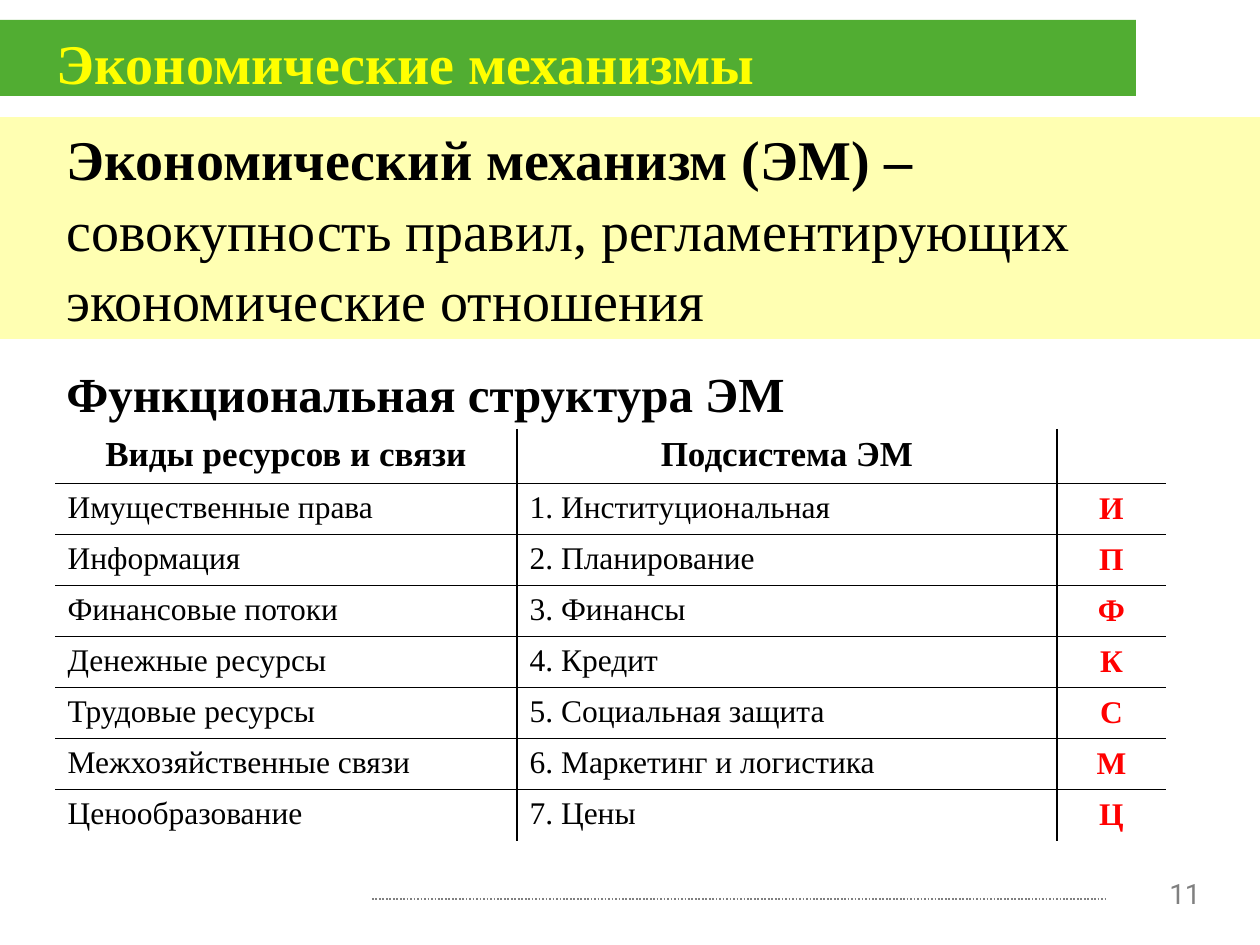
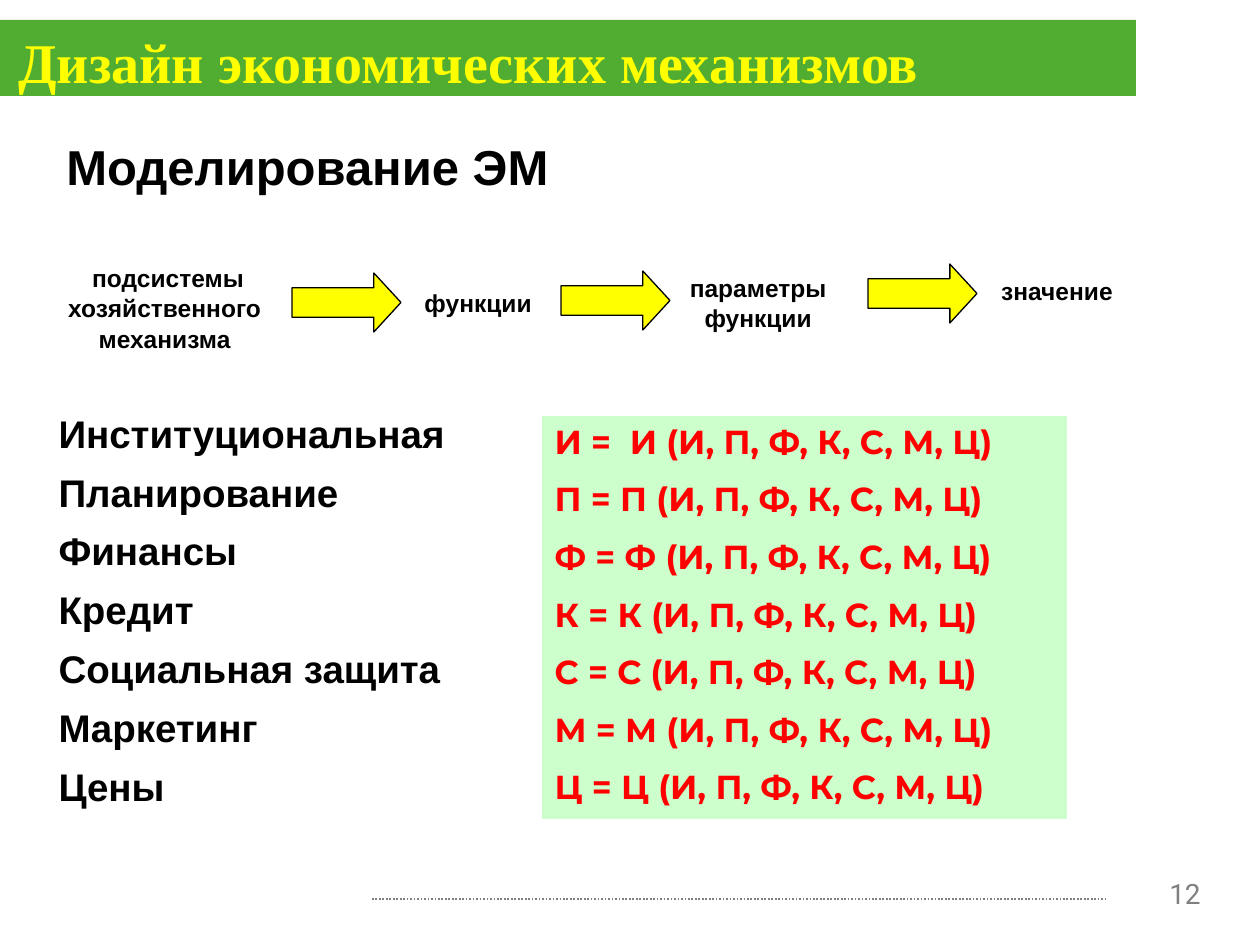
from collections import namedtuple

from lxml import etree
from pptx import Presentation
from pptx.dml.color import RGBColor
from pptx.enum.dml import MSO_LINE
from pptx.enum.shapes import MSO_CONNECTOR, MSO_SHAPE
from pptx.enum.text import MSO_ANCHOR as Anchor, PP_ALIGN as Align
from pptx.oxml.ns import qn
from pptx.util import Pt

EMU_PER_PX = 914400 / 126
PAGE_WIDTH, PAGE_HEIGHT = 1260, 945

BLACK = RGBColor(0x00, 0x00, 0x00)
RED = RGBColor(0xFF, 0x00, 0x00)
YELLOW = RGBColor(0xFF, 0xFF, 0x00)
GREEN = RGBColor(0x51, 0xAD, 0x32)
PALE_GREEN = RGBColor(0xCC, 0xFF, 0xCC)
GREY = RGBColor(0x80, 0x80, 0x80)

SERIF, SANS = "Times New Roman", "Arial"
NUMBER_FONT, FORMULA_FONT = "Roboto", "Montserrat"
LINE_SPACING = 1.05
NO_GRID_STYLE = "{2D5ABB26-0587-4C30-8999-92F81FD0307C}"

Box = namedtuple("Box", "left top width height")

SUBSYSTEMS = [
    ("Имущественные права", "Институциональная", "И"),
    ("Информация", "Планирование", "П"),
    ("Финансовые потоки", "Финансы", "Ф"),
    ("Денежные ресурсы", "Кредит", "К"),
    ("Трудовые ресурсы", "Социальная защита", "С"),
    ("Межхозяйственные связи", "Маркетинг и логистика", "М"),
    ("Ценообразование", "Цены", "Ц"),
]
SYMBOLS = [symbol for _, _, symbol in SUBSYSTEMS]


def px(length):
    return round(length * EMU_PER_PX)


def emu(box):
    return [px(length) for length in box]


def inside(box, left, top, width, height):
    """Return a box whose left and top are measured from the outer box."""
    return Box(box.left + left, box.top + top, width, height)


def write(para, text, size, font=SERIF, colour=BLACK, bold=False):
    span = para.add_run()
    span.text = text
    span.font.size = Pt(size)
    span.font.name = font
    span.font.color.rgb = colour
    span.font.bold = bold


def place_text(page, box, lines, align=Align.LEFT, anchor=Anchor.TOP, **style):
    frame = page.shapes.add_textbox(*emu(box)).text_frame
    frame.word_wrap = True
    frame.vertical_anchor = anchor
    for index, line in enumerate(lines):
        para = frame.add_paragraph() if index else frame.paragraphs[0]
        para.alignment = align
        para.line_spacing = LINE_SPACING
        write(para, line, **style)
    return frame


def place_shape(page, kind, box, colour, outline=None):
    shape = page.shapes.add_shape(kind, *emu(box))
    shape.shadow.inherit = False
    shape.fill.solid()
    shape.fill.fore_color.rgb = colour
    if outline is None:
        shape.line.fill.background()
    else:
        shape.line.color.rgb = outline
        shape.line.width = Pt(0.75)
    return shape


def set_opacity(shape, percent):
    colour = shape.fill._xPr.find(qn("a:solidFill"))[0]
    etree.SubElement(colour, qn("a:alpha"), val=str(percent * 1000))


def add_border(cell, side):
    """Draw a black border; sides are to be given in the order L, R, T, B."""
    properties = cell._tc.get_or_add_tcPr()
    line = etree.SubElement(properties, qn(f"a:ln{side}"), w=str(Pt(1)))
    fill = etree.SubElement(line, qn("a:solidFill"))
    etree.SubElement(fill, qn("a:srgbClr"), val=str(BLACK))


def place_table(page, box, widths, heights):
    """Add a plain table; heights are the relative weights of its rows."""
    table = page.shapes.add_table(len(heights), len(widths), *emu(box)).table
    table.first_row = table.horz_banding = False
    table._tbl.tblPr.find(qn("a:tableStyleId")).text = NO_GRID_STYLE
    for column, width in zip(table.columns, widths):
        column.width = px(width)
    for row, height in zip(table.rows, heights):
        row.height = px(box.height * height / sum(heights))
    return table


def fill_cell(cell, text, align=Align.LEFT, anchor=Anchor.TOP, fill=None, **style):
    if fill is None:
        cell.fill.background()
    else:
        cell.fill.solid()
        cell.fill.fore_color.rgb = fill
    cell.vertical_anchor = anchor
    para = cell.text_frame.paragraphs[0]
    para.alignment = align
    if text:
        write(para, text, **style)


def add_title(page, title, box):
    place_shape(page, MSO_SHAPE.RECTANGLE, Box(0, 20, 1136, 76), GREEN)
    place_text(page, box, [title], anchor=Anchor.MIDDLE,
               size=32, colour=YELLOW, bold=True)


def add_footer(page, number, box):
    middle = box.top + 30
    rule = page.shapes.add_connector(
        MSO_CONNECTOR.STRAIGHT, *emu((box.left, middle, box.left + 734, middle)))
    rule.line.color.rgb = GREY
    rule.line.width = Pt(1)
    rule.line.dash_style = MSO_LINE.ROUND_DOT
    etree.SubElement(rule._element.spPr, qn("a:effectLst"))
    place_text(page, inside(box, 783, 0, 60, 36), [str(number)],
               align=Align.CENTER, size=16, font=NUMBER_FONT, colour=GREY)


def add_page(deck, number, title, title_box):
    page = deck.slides.add_slide(deck.slide_layouts[6])
    add_title(page, title, title_box)
    add_footer(page, number, Box(372, 869, 843, 36))
    return page


def add_definition(page, box):
    band = place_shape(page, MSO_SHAPE.RECTANGLE, box, YELLOW)
    set_opacity(band, 30)
    frame = place_text(page, inside(box, 54, -2, 1091, 217),
                       ["Экономический механизм (ЭМ) – "], size=32, bold=True)
    write(frame.paragraphs[0],
          "совокупность правил, регламентирующих экономические отношения", size=32)


def add_structure_table(page, box):
    heights = [54] + [51] * len(SUBSYSTEMS)
    table = place_table(page, box, [462, 540, 109], heights)
    rows = [("Виды ресурсов и связи", "Подсистема ЭМ", "")]
    rows += [(resource, f"{index}. {name}", symbol)
             for index, (resource, name, symbol) in enumerate(SUBSYSTEMS, 1)]
    body_styles = [{}, {},
                   dict(align=Align.CENTER, anchor=Anchor.MIDDLE, colour=RED, bold=True)]
    header_style = dict(align=Align.CENTER, size=20, bold=True)
    for row, texts in enumerate(rows):
        for column, text in enumerate(texts):
            cell = table.cell(row, column)
            sides = [("L", column == 1), ("R", column == 0),
                     ("T", row > 0), ("B", row < len(rows) - 1)]
            for side, drawn in sides:
                if drawn:
                    add_border(cell, side)
            style = {"size": 18, **body_styles[column]} if row else header_style
            fill_cell(cell, text, **style)


def add_steps(page, box):
    steps = [
        (["подсистемы", "хозяйственного ", "механизма "], (0, 0, 336, 102)),
        (["функции "], (363, 25, 237, 43)),
        (["параметры ", "функции "], (640, 10, 243, 72)),
        (["значение"], (948, 13, 218, 43)),
    ]
    for lines, place in steps:
        place_text(page, inside(box, *place), lines, align=Align.CENTER,
                   size=14, font=SANS, bold=True)
    for left, top in [(292, 18), (561, 16), (868, 9)]:
        arrow = place_shape(page, MSO_SHAPE.RIGHT_ARROW,
                            inside(box, left, top, 109, 59), YELLOW, BLACK)
        arrow.adjustments[1] = 0.46


def add_list_table(page, box, lines, **style):
    table = place_table(page, box, [box.width], [1] * len(lines))
    for row, line in enumerate(lines):
        fill_cell(table.cell(row, 0), line, bold=True, **style)


def build_mechanisms(deck):
    page = add_page(deck, 11, "Экономические механизмы", Box(44, 24, 970, 72))
    add_definition(page, Box(0, 117, PAGE_WIDTH, 222))
    place_text(page, Box(54, 354, 774, 72), ["Функциональная структура ЭМ"],
               size=28, bold=True)
    add_structure_table(page, Box(55, 429, 1111, 411))


def build_design(deck):
    page = add_page(deck, 12, "Дизайн экономических механизмов", Box(6, 23, 950, 73))
    place_text(page, Box(54, 127, 1051, 72), ["Моделирование ЭМ"],
               size=28, font=SANS, bold=True)
    add_steps(page, Box(0, 255, 1166, 102))

    names = ["Маркетинг" if symbol == "М" else name for _, name, symbol in SUBSYSTEMS]
    add_list_table(page, Box(46, 407, 556, 412), names, size=22, font=SANS)

    arguments = ", ".join(SYMBOLS)
    heads = ["И =  И"] + [f"{symbol} = {symbol}" for symbol in SYMBOLS[1:]]
    formulas = [f"{head} ({arguments})" for head in heads]
    add_list_table(page, Box(542, 416, 525, 403), formulas, size=19,
                   font=FORMULA_FONT, colour=RED, fill=PALE_GREEN)


def main():
    deck = Presentation()
    deck.slide_width, deck.slide_height = px(PAGE_WIDTH), px(PAGE_HEIGHT)
    build_mechanisms(deck)
    build_design(deck)
    deck.save("out.pptx")


if __name__ == "__main__":
    main()
